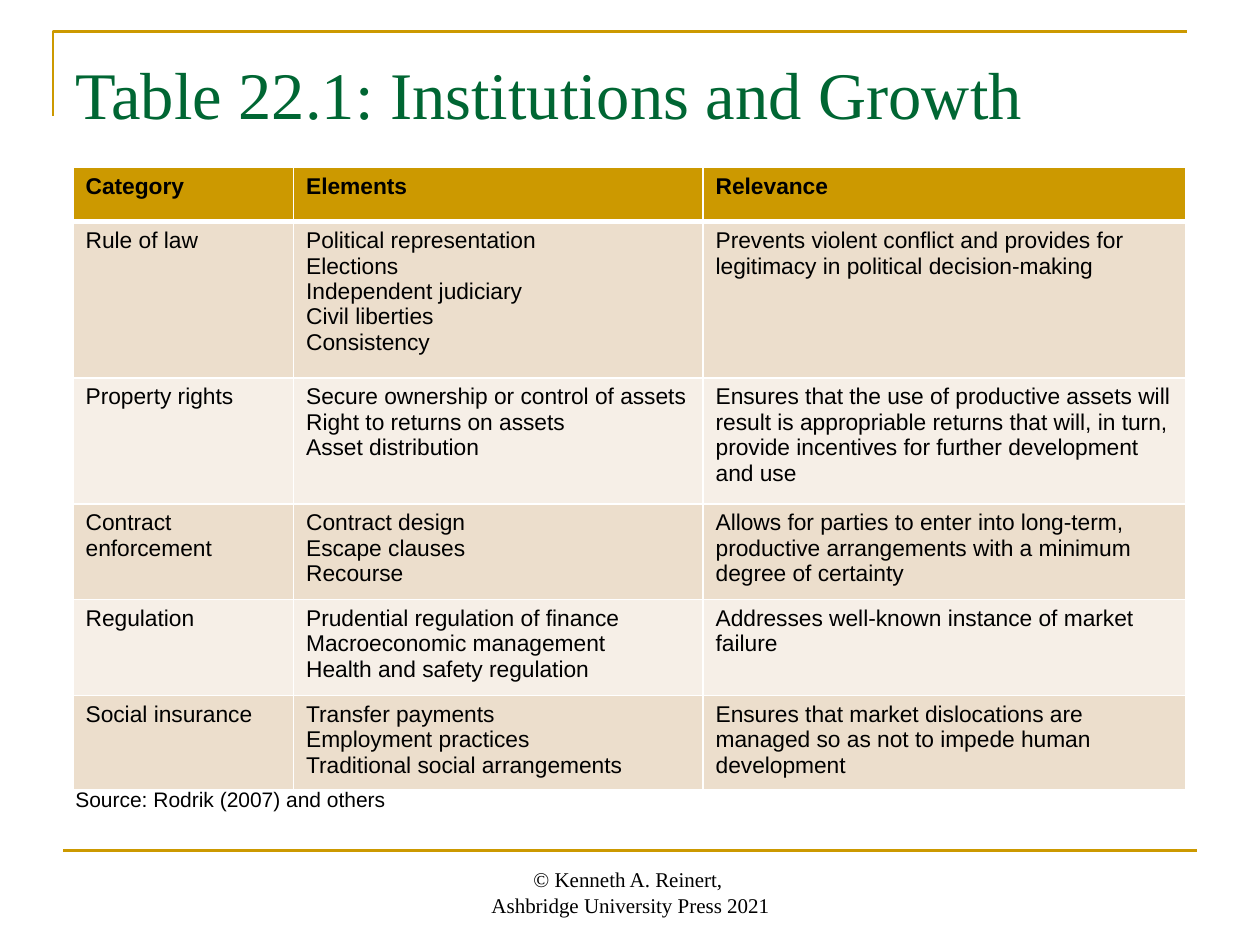
from lxml import etree
from pptx import Presentation, util as u
from pptx.dml.color import RGBColor
from pptx.enum import shapes, text
from pptx.oxml import ns

TITLE = "Table 22.1: Institutions and Growth"
SOURCE = "Source: Rodrik (2007) and others"
CREDIT = ["© Kenneth A. Reinert, ", "Ashbridge University Press 2021"]
HEADINGS = ("Category", "Elements", "Relevance")
INSTITUTIONS = [
    ("Rule of law",
     ["Political representation", "Elections", "Independent judiciary",
      "Civil liberties", "Consistency"],
     "Prevents violent conflict and provides for legitimacy in political decision-making"),
    ("Property rights",
     ["Secure ownership or control of assets", "Right to returns on assets",
      "Asset distribution"],
     "Ensures that the use of productive assets will result is appropriable returns "
     "that will, in turn, provide incentives for further development and use"),
    ("Contract enforcement",
     ["Contract design", "Escape clauses", "Recourse"],
     "Allows for parties to enter into long-term, productive arrangements "
     "with a minimum degree of certainty"),
    ("Regulation",
     ["Prudential regulation of finance", "Macroeconomic management",
      "Health and safety regulation"],
     "Addresses well-known instance of market failure"),
    ("Social insurance",
     ["Transfer payments", "Employment practices", "Traditional social arrangements"],
     "Ensures that market dislocations are managed so as not to impede human development"),
]
COLORS = {"gold": "CC9900", "green": "006633", "black": "000000",
          "white": "FFFFFF", "odd": "ECDECC", "even": "F6EFE7"}
SANS, SERIF = "Arial", "Times New Roman"
WIDTH, HEIGHT = 10, 7.5
MARGIN = WIDTH * 0.05
COLUMNS = (1.75, 3.25, 3.83)
ROWS = (0.43, 1.24, 1, 0.76, 0.76, 0.7)
TABLE_LEFT, TABLE_TOP = 0.58, 1.33


def color(name):
    return RGBColor.from_string(COLORS[name])


def write(frame, lines, size, font, ink="black", bold=False, align=text.PP_ALIGN.LEFT):
    frame.word_wrap = True
    for i, line in enumerate(lines):
        paragraph = frame.paragraphs[0] if i == 0 else frame.add_paragraph()
        paragraph.alignment = align
        run = paragraph.add_run()
        run.text = line
        run.font.size, run.font.name, run.font.bold = u.Pt(size), font, bold
        run.font.color.rgb = color(ink)


def add_text(slide, box, lines, size, font, anchor=text.MSO_ANCHOR.TOP, **style):
    frame = slide.shapes.add_textbox(*map(u.Inches, box)).text_frame
    frame.vertical_anchor = anchor
    write(frame, lines, size, font, **style)


def add_borders(cell, widths):
    properties = cell._tc.get_or_add_tcPr()
    for side, points in widths.items():
        border = etree.SubElement(properties, ns.qn(f"a:ln{side}"), w=str(u.Pt(points)))
        fill = etree.SubElement(border, ns.qn("a:solidFill"))
        etree.SubElement(fill, ns.qn("a:srgbClr"), val=COLORS["white"])


def add_rules(slide):
    corner = slide.shapes.build_freeform(u.Inches(0.42), u.Inches(0.92))
    corner.add_line_segments([(u.Inches(0.42), u.Inches(0.25)),
                              (u.Inches(9.42), u.Inches(0.25))], close=False)
    bracket = corner.convert_to_shape()
    bracket.shadow.inherit = False
    bracket.fill.background()
    footer_y = u.Inches(HEIGHT * 0.9)
    footer = slide.shapes.add_connector(
        shapes.MSO_CONNECTOR.STRAIGHT, u.Inches(MARGIN), footer_y,
        u.Inches(WIDTH - MARGIN), footer_y)
    etree.SubElement(footer._element.spPr, ns.qn("a:effectLst"))
    for rule in (bracket, footer):
        rule.line.color.rgb = color("gold")
        rule.line.width = u.Pt(1.5)


def add_institutions(slide):
    table = slide.shapes.add_table(
        len(ROWS), len(COLUMNS), u.Inches(TABLE_LEFT), u.Inches(TABLE_TOP),
        u.Inches(sum(COLUMNS)), u.Inches(sum(ROWS))).table
    for column, width in zip(table.columns, COLUMNS):
        column.width = u.Inches(width)
    for row, height in zip(table.rows, ROWS):
        row.height = u.Inches(height)
    for r, entries in enumerate([HEADINGS, *INSTITUTIONS]):
        band = "gold" if r == 0 else "odd" if r % 2 else "even"
        for c, entry in enumerate(entries):
            cell = table.cell(r, c)
            add_borders(cell, {"L": 1, "R": 1, "T": 3 if r == 1 else 1,
                               "B": 3 if r == 0 else 1})
            cell.fill.solid()
            cell.fill.fore_color.rgb = color(band)
            lines = entry if isinstance(entry, list) else [entry]
            write(cell.text_frame, lines, 13, SANS, bold=r == 0)


def main():
    deck = Presentation()
    deck.slide_width, deck.slide_height = u.Inches(WIDTH), u.Inches(HEIGHT)
    slide = deck.slides.add_slide(deck.slide_layouts[6])
    content_width = WIDTH - 2 * MARGIN
    add_rules(slide)
    add_text(slide, (MARGIN, 0.37, content_width, 0.8), [TITLE], 38, SERIF, ink="green")
    add_institutions(slide)
    add_text(slide, (MARGIN, 6.19, content_width, 0.3), [SOURCE], 12, SANS)
    add_text(slide, (3.42, 6.83, 3.17, 0.5), CREDIT, 12, SERIF,
             anchor=text.MSO_ANCHOR.BOTTOM, align=text.PP_ALIGN.CENTER)
    deck.save("out.pptx")


if __name__ == "__main__":
    main()
